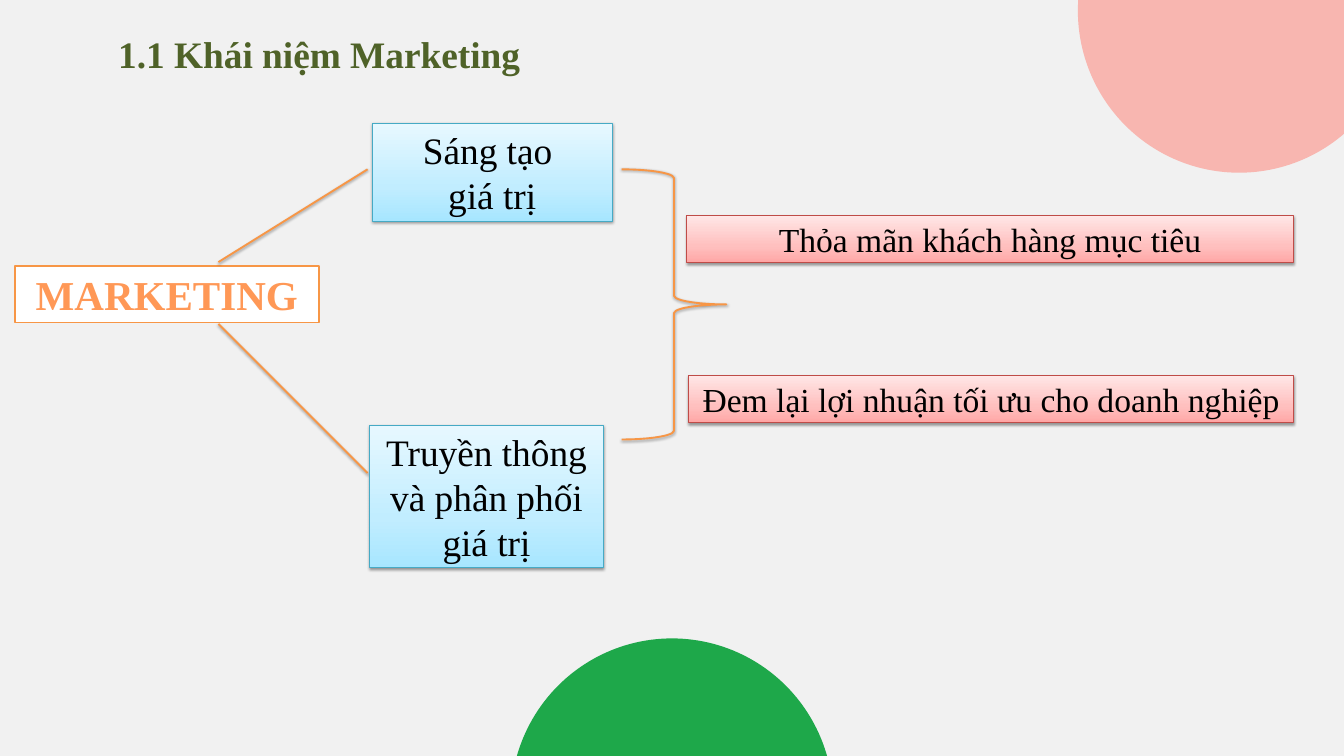
from lxml.etree import SubElement
from pptx import Presentation
from pptx.dml.color import RGBColor
from pptx.enum.shapes import MSO_CONNECTOR, MSO_SHAPE
from pptx.enum.text import MSO_ANCHOR, MSO_AUTO_SIZE, PP_ALIGN
from pptx.oxml.ns import qn
from pptx.util import Inches, Pt

FONT = "Times New Roman"
BACKGROUND = RGBColor(0xF1, 0xF1, 0xF1)
GREEN = RGBColor(0x1E, 0xA8, 0x4A)
PINK = RGBColor(0xF8, 0xB6, 0xB0)
OLIVE = RGBColor(0x4F, 0x62, 0x28)
ORANGE = RGBColor(0xF7, 0x96, 0x46)
TEAL = RGBColor(0x46, 0xAA, 0xC5)
RED = RGBColor(0xBF, 0x4C, 0x48)
BLACK = RGBColor(0, 0, 0)
WHITE = RGBColor(0xFF, 0xFF, 0xFF)

# Gradient stops: percent, colour
BLUE_STOPS = [(0, RGBColor(0xA7, 0xE6, 0xFF)), (35, RGBColor(0xC1, 0xED, 0xFF)),
              (100, RGBColor(0xE7, 0xF8, 0xFF))]
RED_STOPS = [(0, RGBColor(0xFF, 0xA6, 0xA5)), (35, RGBColor(0xFF, 0xC0, 0xBF)),
             (100, RGBColor(0xFF, 0xE7, 0xE7))]
LETTER_STOPS = [(0, RGBColor(0x9D, 0x47, 0x00)), (78, RGBColor(0xFF, 0x98, 0x56)),
                (100, RGBColor(0xFF, 0xF5, 0xF1))]

TITLE = "1.1 Khái niệm Marketing"
TOPIC = "MARKETING"
# Text, (left, top, width, height), text size, gradient stops, line colour
CARDS = [
    ("Sáng tạo \ngiá trị", (5.54, 1.84, 3.57, 1.45), 40, BLUE_STOPS, TEAL),
    ("Truyền thông và phân phối giá trị", (5.5, 6.33, 3.48, 2.12), 40, BLUE_STOPS, TEAL),
    ("Thỏa mãn khách hàng mục tiêu", (10.22, 3.2, 9.03, 0.71), 36, RED_STOPS, RED),
    ("Đem lại lợi nhuận tối ưu cho doanh nghiệp", (10.25, 5.58, 9, 0.71), 36, RED_STOPS, RED),
]
CIRCLES = [((7.6, 9.5, 4.8, 4.82), GREEN), ((16.04, -2.25, 4.8, 4.82), PINK)]
BRANCHES = [((3.25, 3.9), (5.47, 2.52)), ((3.25, 4.82), (5.47, 7.04))]
BRACE_AREA = (9.25, 2.52, 1.56, 4.02)


def inches(lengths):
    return [Inches(length) for length in lengths]


def add_plain_shape(page, kind, area, fill=None, line=None, width=0.75):
    shape = page.shapes.add_shape(kind, *inches(area))
    shape.shadow.inherit = False
    if fill is None:
        shape.fill.background()
    else:
        shape.fill.solid()
        shape.fill.fore_color.rgb = fill
    if line is None:
        shape.line.fill.background()
    else:
        shape.line.color.rgb = line
        shape.line.width = Pt(width)
    return shape


def solid_to_gradient(properties, stops, angle):
    """Swap the solid fill inside spPr or rPr for a linear gradient."""
    gradient = properties.makeelement(qn("a:gradFill"), {"rotWithShape": "1"})
    stop_list = SubElement(gradient, qn("a:gsLst"))
    for percent, color in stops:
        stop = SubElement(stop_list, qn("a:gs"), pos=str(percent * 1000))
        SubElement(stop, qn("a:srgbClr"), val=str(color))
    SubElement(gradient, qn("a:lin"), ang=str(angle * 60000), scaled="0")
    properties.replace(properties.find(qn("a:solidFill")), gradient)


def add_soft_shadow(properties):
    effects = properties.find(qn("a:effectLst"))
    if effects is None:
        effects = SubElement(properties, qn("a:effectLst"))
    shadow = SubElement(effects, qn("a:outerShdw"), blurRad=str(Pt(3.1)), dist=str(Pt(1.6)),
                        dir=str(90 * 60000), rotWithShape="0")
    color = SubElement(shadow, qn("a:srgbClr"), val=str(BLACK))
    SubElement(color, qn("a:alpha"), val="38000")


def write_text(box, text, size, color, bold=False, anchor=MSO_ANCHOR.MIDDLE):
    frame = box.text_frame
    frame.text = text
    frame.word_wrap = True
    frame.vertical_anchor = anchor
    for para in frame.paragraphs:
        para.alignment = PP_ALIGN.CENTER
        for span in para.runs:
            span.font.name = FONT
            span.font.size = Pt(size)
            span.font.bold = bold
            span.font.color.rgb = color


def add_topic(page):
    box = add_plain_shape(page, MSO_SHAPE.RECTANGLE, (0.22, 3.96, 4.53, 0.84), WHITE, ORANGE, 2)
    write_text(box, TOPIC, 44, ORANGE, bold=True)
    box.text_frame.auto_size = MSO_AUTO_SIZE.SHAPE_TO_FIT_TEXT
    span = box.text_frame.paragraphs[0].runs[0]
    solid_to_gradient(span._r.get_or_add_rPr(), LETTER_STOPS, 90)


def add_card(page, text, area, size, stops, line):
    card = add_plain_shape(page, MSO_SHAPE.RECTANGLE, area, WHITE, line)
    solid_to_gradient(card._element.spPr, stops, 270)
    add_soft_shadow(card._element.spPr)
    write_text(card, text, size, BLACK)
    card.text_frame.auto_size = MSO_AUTO_SIZE.SHAPE_TO_FIT_TEXT


def add_branch(page, start, end):
    branch = page.shapes.add_connector(MSO_CONNECTOR.STRAIGHT, *inches(start + end))
    branch.line.color.rgb = ORANGE
    branch.line.width = Pt(2)
    add_soft_shadow(branch._element.spPr)


def main():
    deck = Presentation()
    deck.slide_width, deck.slide_height = Inches(20), Inches(11.25)
    page = deck.slides.add_slide(deck.slide_layouts[6])
    page.background.fill.solid()
    page.background.fill.fore_color.rgb = BACKGROUND

    for area, color in CIRCLES:
        add_plain_shape(page, MSO_SHAPE.OVAL, area, color)
    title = page.shapes.add_textbox(*inches((0.25, 0.42, 9, 1.01)))
    write_text(title, TITLE, 40, OLIVE, bold=True, anchor=MSO_ANCHOR.TOP)
    add_topic(page)
    for start, end in BRANCHES:
        add_branch(page, start, end)
    brace = add_plain_shape(page, MSO_SHAPE.RIGHT_BRACE, BRACE_AREA, line=ORANGE, width=2)
    add_soft_shadow(brace._element.spPr)
    for card in CARDS:
        add_card(page, *card)
    deck.save("out.pptx")


if __name__ == "__main__":
    main()
